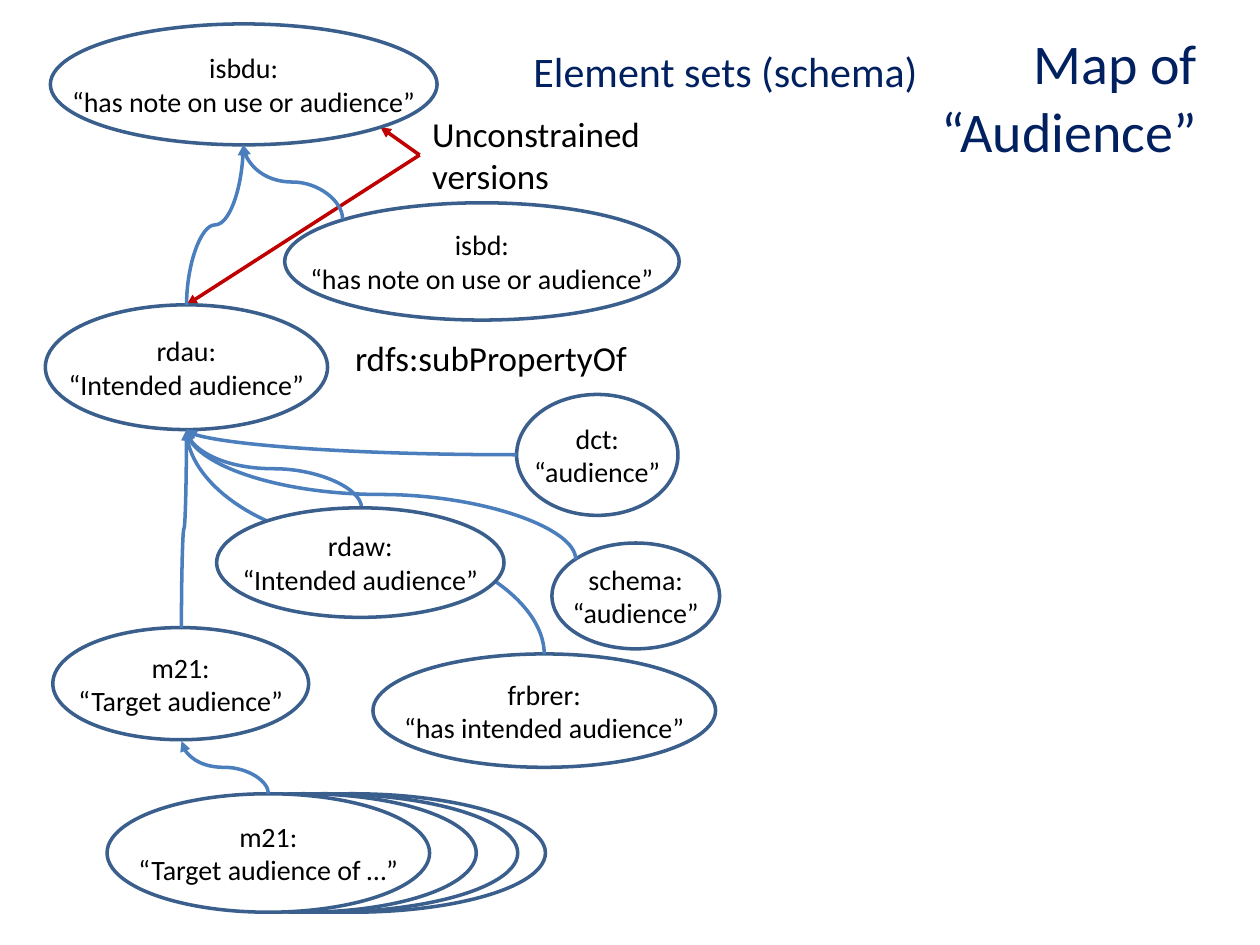
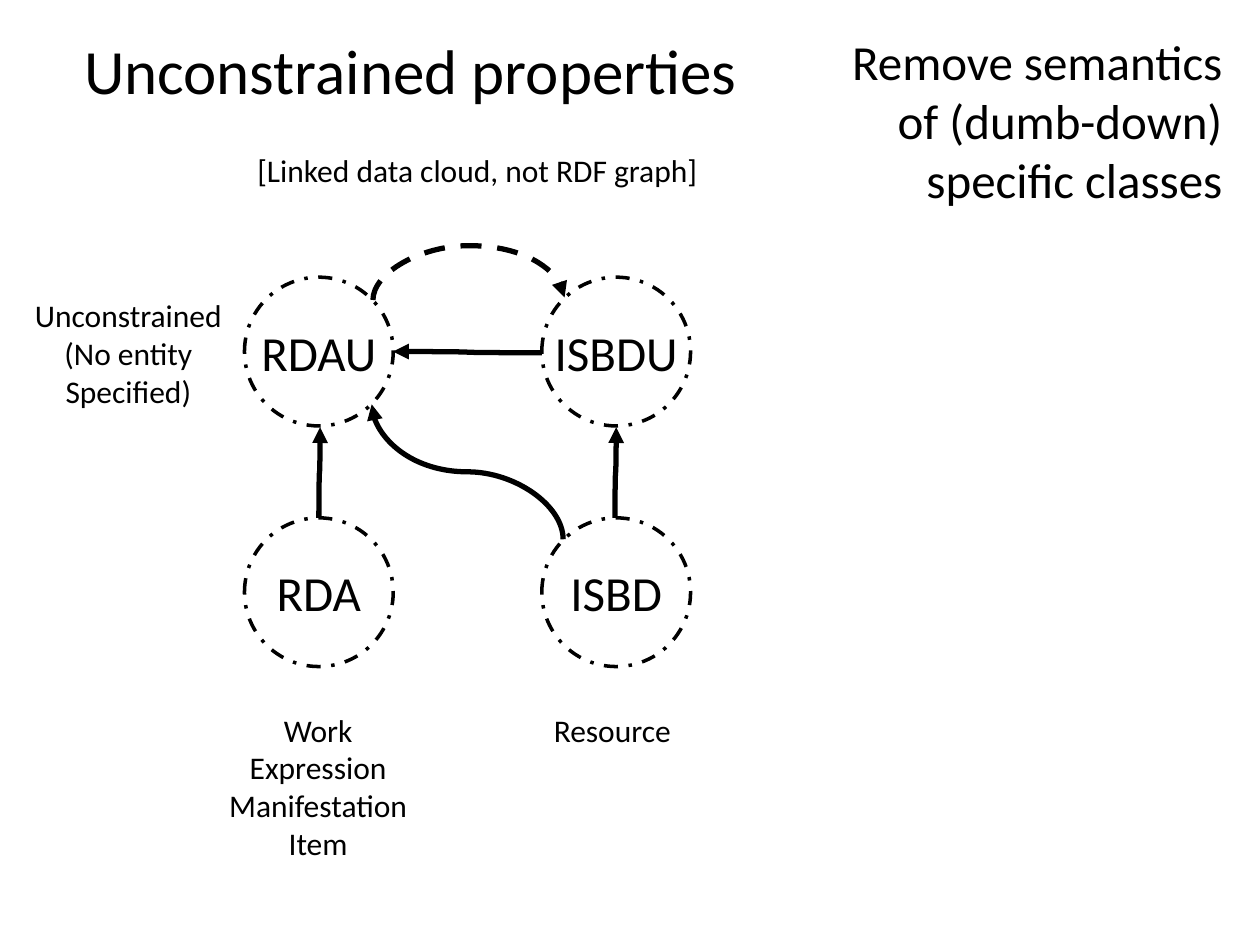
"""Build two slides mapping audience properties and unconstrained RDF properties."""
from lxml import etree
from pptx import Presentation
from pptx.dml.color import RGBColor
from pptx.enum.dml import MSO_LINE
from pptx.enum.shapes import MSO_CONNECTOR, MSO_SHAPE
from pptx.enum.text import MSO_ANCHOR, MSO_AUTO_SIZE, PP_ALIGN
from pptx.oxml.ns import qn
from pptx.util import Pt

LEFT, CENTER, RIGHT = PP_ALIGN.LEFT, PP_ALIGN.CENTER, PP_ALIGN.RIGHT
MIDDLE = MSO_ANCHOR.MIDDLE
GROW = MSO_AUTO_SIZE.SHAPE_TO_FIT_TEXT
OVAL = MSO_SHAPE.OVAL
STRAIGHT, CURVE = MSO_CONNECTOR.STRAIGHT, MSO_CONNECTOR.CURVE
DASH, DASH_DOT = MSO_LINE.DASH, MSO_LINE.DASH_DOT
FONT = "Calibri"
COLORS = {
    "text": "000000",
    "navy": "002060",
    "white": "FFFFFF",
    "oval": "3A5F8C",
    "link": "4B7EBC",
    "red": "C00000",
}


def add_text(slide, text, box, size=16, color="text", align=CENTER, outline=None, fill=None, dash=None):
    """Add a text box, or a labelled oval when an outline colour is given."""
    left, top, width, height = (Pt(length) for length in box)
    if outline:
        shape = slide.shapes.add_shape(OVAL, left, top, width, height)
        shape.shadow.inherit = False
        shape.line.color.rgb = RGBColor.from_string(COLORS[outline])
        shape.line.width = Pt(2)
        if dash:
            shape.line.dash_style = dash
        if fill:
            shape.fill.solid()
            shape.fill.fore_color.rgb = RGBColor.from_string(COLORS[fill])
        else:
            shape.fill.background()
        shape.text_frame.vertical_anchor = MIDDLE
    else:
        shape = slide.shapes.add_textbox(left, top, width, height)
        shape.text_frame.auto_size = GROW
    shape.text_frame.word_wrap = False
    shape.text_frame.text = text
    for paragraph in shape.text_frame.paragraphs:
        paragraph.alignment = align
        paragraph.font.name = FONT
        paragraph.font.size = Pt(size)
        paragraph.font.color.rgb = RGBColor.from_string(COLORS[color])


def add_arrow(slide, start, end, color, width=2, route="upward", bend=None, dash=None):
    """Add an arrow; an upward route leaves its start vertically, a corner route bends once."""
    (x1, y1), (x2, y2) = start, end
    if route == "upward":
        middle_x, middle_y = (x1 + x2) / 2, (y1 + y2) / 2
        rise, run = y1 - y2, x2 - x1
        x1, x2 = middle_x - rise / 2, middle_x + rise / 2
        y1, y2 = middle_y - run / 2, middle_y + run / 2
    kind = STRAIGHT if route == "straight" else CURVE
    connector = slide.shapes.add_connector(kind, Pt(x1), Pt(y1), Pt(x2), Pt(y2))
    connector.line.color.rgb = RGBColor.from_string(COLORS[color])
    connector.line.width = Pt(width)
    if dash:
        connector.line.dash_style = dash
    properties = connector.element.spPr
    geometry = properties.find(qn("a:prstGeom"))
    if route == "upward":
        properties.find(qn("a:xfrm")).set("rot", str(270 * 60000))
    if route == "corner":
        geometry.set("prst", "curvedConnector2")
    if bend:
        guide = etree.SubElement(geometry.find(qn("a:avLst")), qn("a:gd"))
        guide.set("name", "adj1")
        guide.set("fmla", f"val {round(bend * 100000)}")
    etree.SubElement(properties.find(qn("a:ln")), qn("a:tailEnd")).set("type", "triangle")
    etree.SubElement(properties, qn("a:effectLst"))


presentation = Presentation()
presentation.slide_width, presentation.slide_height = Pt(720), Pt(540)
blank_layout = presentation.slide_layouts[6]

audience_slide = presentation.slides.add_slide(blank_layout)
add_text(audience_slide, "Unconstrained\nversions", (239.8, 60.5, 134.6, 55.4), size=20, align=LEFT)
add_text(audience_slide, "Map of\n“Audience”", (529.2, 13, 162, 85), size=32, color="navy", align=RIGHT)
add_text(audience_slide, "Element sets (schema)", (295.2, 22.3, 236.2, 36), size=24, color="navy", align=RIGHT)
for unconstrained_end in [(217.4, 72.7), (106.6, 174.2)]:
    add_arrow(audience_slide, (239.8, 88.6), unconstrained_end, "red", route="straight")

elements = [
    ("", (90.7, 453.6, 221, 67.7)),
    ("", (74.9, 453.6, 221, 67.7)),
    ("", (74.9, 453.6, 197.3, 67.7)),
    ("m21:\n“Target audience of …”", (61.2, 453.6, 184.3, 67.7)),
    ("m21:\n“Target audience”", (30.2, 358.6, 146.2, 64.1)),
    ("frbrer:\n“has intended audience”", (213.1, 373.7, 195.8, 64.8)),
    ("schema:\n“audience”", (315.4, 310.3, 95.8, 60.5)),
    ("dct:\n“audience”", (295.2, 225.4, 92.2, 69.1)),
    ("rdau:\n“Intended audience”", (25.9, 174.2, 161.3, 71.3)),
    ("isbd:\n“has note on use or audience”", (162.7, 115.9, 225.4, 67)),
    ("isbdu:\n“has note on use or audience”", (28.8, 13.7, 221, 69.1)),
]
rdaw_element = ("rdaw:\n“Intended audience”", (123.8, 290.2, 164.2, 62.6))
for label, box in elements:
    add_text(audience_slide, label, box, outline="oval", fill="white")

isbdu_bottom, rdau_bottom, m21_bottom = (139, 82.8), (106.6, 245.5), (103.7, 423.4)
sub_properties = [
    ((195.8, 125.3), isbdu_bottom),
    ((153.4, 453.6), m21_bottom),
    ((103.7, 358.6), rdau_bottom),
    ((206.6, 290.2), rdau_bottom),
    ((311, 373.7), rdau_bottom),
    ((329, 319.7), rdau_bottom),
    ((106.6, 174.2), isbdu_bottom),
]
for start, end in sub_properties:
    add_arrow(audience_slide, start, end, "link")
add_arrow(audience_slide, (295.2, 259.9), rdau_bottom, "link", route="corner")
label, box = rdaw_element
add_text(audience_slide, label, box, outline="oval", fill="white")
add_text(audience_slide, "rdfs:subPropertyOf", (195.8, 188.6, 171.4, 31.7), size=20, align=LEFT)

properties_slide = presentation.slides.add_slide(blank_layout)
add_text(properties_slide, "Unconstrained properties", (41, 14.4, 391, 51), size=36, align=LEFT)
circle_rows = [(158.4, ("RDAU", "ISBDU")), (295.9, ("RDA", "ISBD"))]
for top, names in circle_rows:
    for left, name in zip((139.7, 309.6), names):
        add_text(properties_slide, name, (left, top, 85, 85), size=28, outline="text", dash=DASH_DOT)

add_arrow(properties_slide, (213.1, 171.4), (322.6, 169.9), "text", width=3, bend=20.67, dash=DASH)
upward_links = [
    ((182.2, 295.9), (182.9, 244.1)),
    ((351.4, 295.9), (352.1, 244.1)),
    ((321.8, 308.2), (212.4, 231.1)),
]
for start, end in upward_links:
    add_arrow(properties_slide, start, end, "text", width=3)
add_arrow(properties_slide, (309.6, 201.6), (224.6, 200.9), "text", width=3, route="sideways")

captions = [
    ("Work\nExpression\nManifestation\nItem", (123.1, 402.5, 117.4, 94.3)),
    ("Resource", (308.9, 402.5, 82.1, 28.8)),
    ("[Linked data cloud, not RDF graph]", (138.2, 82.8, 269.3, 28.8)),
    ("Unconstrained\n(No entity\nSpecified)", (12.2, 165.6, 122.4, 72.7)),
]
for caption, box in captions:
    add_text(properties_slide, caption, box, size=18)
add_text(properties_slide, "Remove semantics\nof (dumb-down)\nspecific classes", (477.4, 14.4, 228.2, 108.7),
         size=28, align=RIGHT)

presentation.save("out.pptx")
